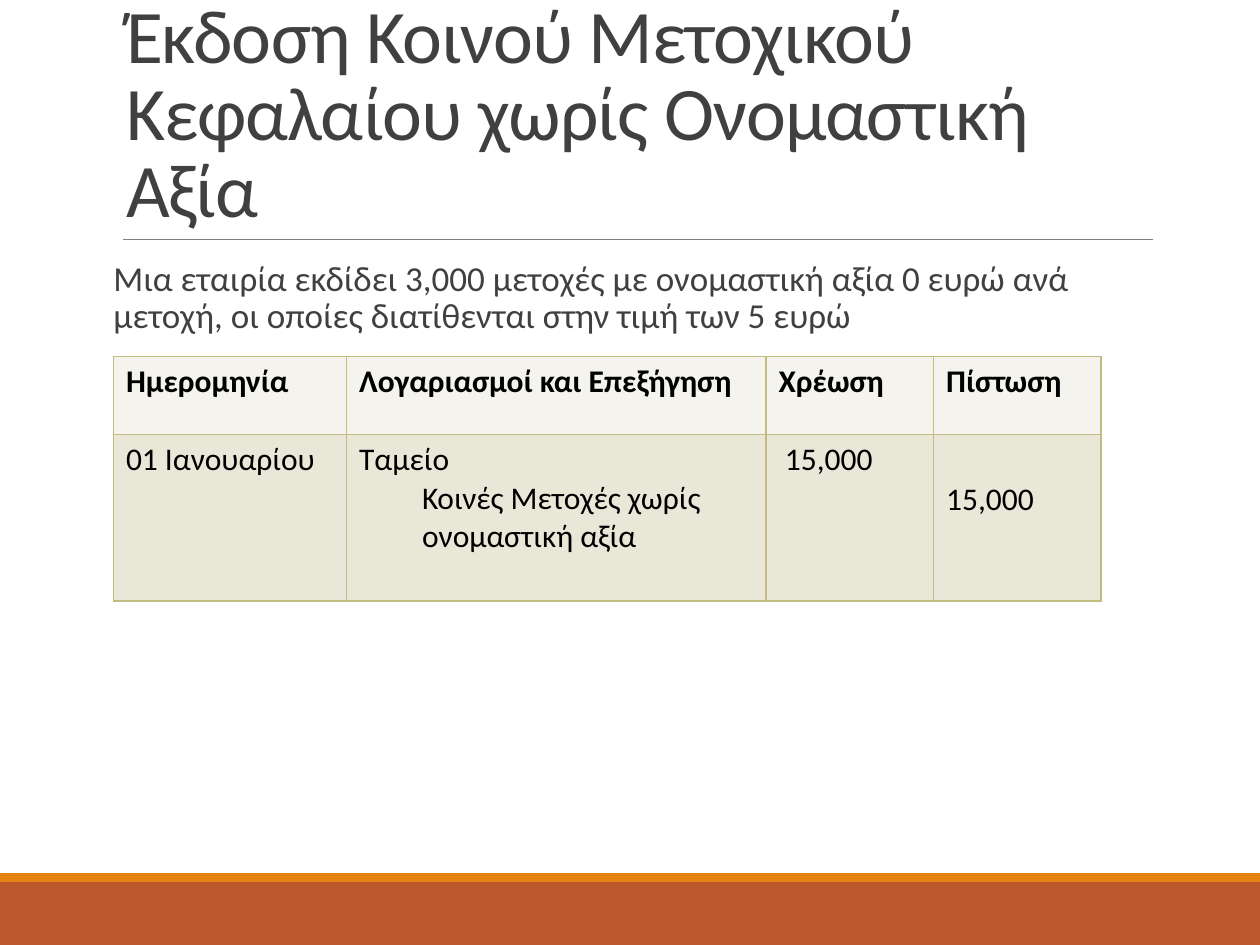
from dataclasses import dataclass, field

from pptx import Presentation
from pptx.dml.color import RGBColor
from pptx.enum.shapes import MSO_CONNECTOR as Connector, MSO_SHAPE as Shape
from pptx.enum.text import MSO_ANCHOR as Anchor, MSO_AUTO_SIZE as AutoSize, PP_ALIGN as Align
from pptx.oxml.ns import qn
from pptx.util import Inches, Pt
from lxml.etree import SubElement

COLORS = {
    "band": "BD582C", "stripe": "E48312", "rule": "808080", "heading": "404040",
    "cell_text": "000000", "header_row": "F4F3ED", "entry_row": "E9E7D8", "border": "C2BC80",
}


@dataclass
class SlideBuilder:
    page: object
    font: str = "Calibri"
    colors: dict = field(default_factory=lambda: COLORS)

    def color(self, name):
        return RGBColor.from_string(self.colors[name])

    def bar(self, name, left, top, width, height):
        box = self.page.shapes.add_shape(
            Shape.RECTANGLE, Inches(left), Inches(top), Inches(width), Inches(height))
        box.shadow.inherit = False
        box.fill.solid()
        box.fill.fore_color.rgb = self.color(name)
        box.line.fill.background()

    def rule(self, left, right, top):
        line = self.page.shapes.add_connector(
            Connector.STRAIGHT, Inches(left), Inches(top), Inches(right), Inches(top))
        line.line.color.rgb = self.color("rule")
        line.line.width = Pt(0.5)
        SubElement(line._element.spPr, qn("a:effectLst"))

    def add_span(self, para, text, size, color, bold=False):
        span = para.add_run()
        span.text = text
        span.font.name = self.font
        span.font.size = Pt(size)
        span.font.bold = bold
        span.font.color.rgb = self.color(color)
        return span

    def place(self, box, left, top, width, height):
        box.left, box.top = Inches(left), Inches(top)
        box.width, box.height = Inches(width), Inches(height)
        box.text_frame.word_wrap = True
        box.text_frame.auto_size = AutoSize.NONE
        para = box.text_frame.paragraphs[0]
        para.alignment = Align.LEFT
        return para

    def title(self, text, *bounds):
        box = self.page.shapes.title
        para = self.place(box, *bounds)
        box.text_frame.vertical_anchor = Anchor.BOTTOM
        para.line_spacing = 0.85
        span = self.add_span(para, text, 43.2, "heading")
        span._r.get_or_add_rPr().set("spc", "-50")

    def body(self, text, *bounds):
        box = self.page.placeholders[1]
        para = self.place(box, *bounds)
        box.text_frame.margin_left = box.text_frame.margin_right = 0
        para.line_spacing = 0.9
        para.space_before, para.space_after = Pt(12), Pt(2)
        self.indent(para, 0)
        SubElement(para._p.get_or_add_pPr(), qn("a:buNone"))
        self.add_span(para, text, 20, "heading")

    def indent(self, para, left):
        props = para._p.get_or_add_pPr()
        props.set("marL", str(Inches(left)))
        props.set("indent", "0")

    def border(self, cell):
        props = cell._tc.get_or_add_tcPr()
        for position, side in enumerate(("lnL", "lnR", "lnT", "lnB")):
            line = props.makeelement(qn(f"a:{side}"), {"w": str(Pt(1))})
            fill = SubElement(line, qn("a:solidFill"))
            SubElement(fill, qn("a:srgbClr"), val=self.colors["border"])
            props.insert(position, line)

    def table(self, rows, left, top, widths, heights):
        frame = self.page.shapes.add_table(
            len(rows), len(widths), Inches(left), Inches(top),
            Inches(sum(widths)), Inches(sum(heights)))
        table = frame.table
        for column, width in zip(table.columns, widths):
            column.width = Inches(width)
        for row, height in zip(table.rows, heights):
            row.height = Inches(height)
        for r, row in enumerate(rows):
            for c, lines in enumerate(row):
                cell = table.cell(r, c)
                cell.fill.solid()
                cell.fill.fore_color.rgb = self.color("entry_row" if r else "header_row")
                self.border(cell)
                for i, text in enumerate(lines):
                    cell_frame = cell.text_frame
                    para = cell_frame.add_paragraph() if i else cell_frame.paragraphs[0]
                    if i:
                        para.level = 1
                        self.indent(para, 0.5)
                    self.add_span(para, text, 18, "cell_text", bold=r == 0)
        return table


def main():
    deck = Presentation()
    deck.slide_width, deck.slide_height = Inches(10), Inches(7.5)
    slide = SlideBuilder(deck.slides.add_slide(deck.slide_layouts[1]))

    # Footer bands and the rule under the title
    slide.bar("band", 0, 7, 10, 0.5)
    slide.bar("stripe", 0, 6.93, 10, 0.07)
    slide.rule(0.98, 9.15, 1.9)

    # Title and introduction
    slide.title("Έκδοση Κοινού Μετοχικού Κεφαλαίου χωρίς Ονομαστική Αξία",
                0.9, 0.31, 8.25, 1.59)
    slide.body("Μια εταιρία εκδίδει 3,000 μετοχές με ονομαστική αξία 0 ευρώ ανά μετοχή, "
               "οι οποίες διατίθενται στην τιμή των 5 ευρώ", 0.9, 2.02, 8.25, 4.4)

    # Journal entry: each cell is a list of lines, later lines are indented
    journal = slide.table(
        [[["Ημερομηνία"], ["Λογαριασμοί και Επεξήγηση"], ["Χρέωση"], ["Πίστωση"]],
         [["01 Ιανουαρίου"], ["Ταμείο", "Κοινές Μετοχές χωρίς ονομαστική αξία"],
          ["15,000"], ["15,000"]]],
        0.9, 2.83, [1.85, 3.33, 1.33, 1.33], [0.62, 1.32])

    # Debit is nudged right; credit sits on the line of its account
    journal.cell(1, 2).margin_left = Inches(0.15)
    journal.cell(1, 3).margin_top = Inches(0.36)

    deck.save("out.pptx")


if __name__ == "__main__":
    main()
